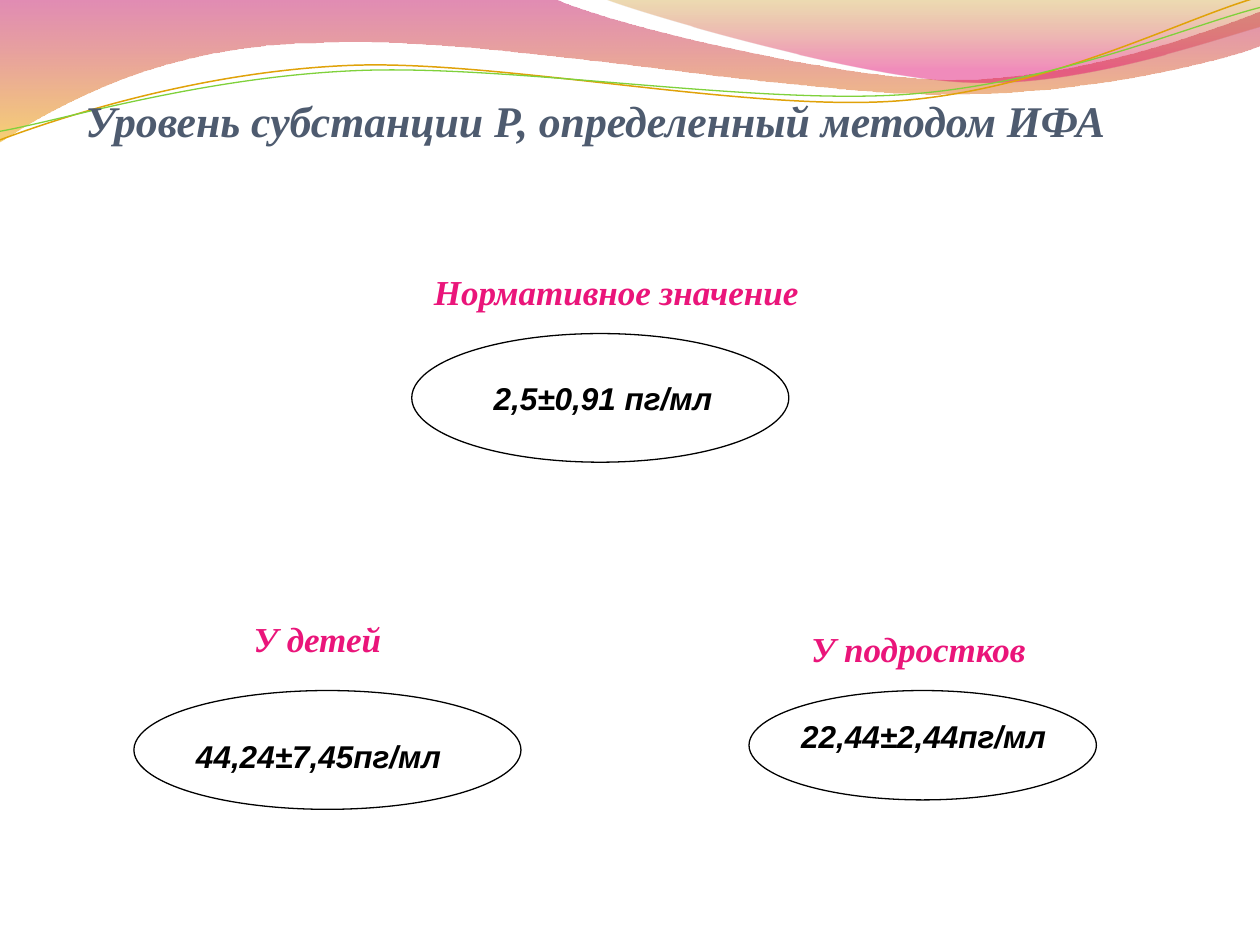
import pptx
import pptx.dml.color
import pptx.enum.shapes
import pptx.enum.text
import pptx.oxml
import pptx.oxml.ns
import pptx.util

Pt = pptx.util.Pt
qn = pptx.oxml.ns.qn
ALIGN = pptx.enum.text.PP_ALIGN
ANCHOR = pptx.enum.text.MSO_ANCHOR
SERIF, SANS = "Times New Roman", "Arial"
CURVE_TILT = 357.3

# Outlines in points: one pair is a straight segment, three pairs are a Bezier curve.
PINK_BAND = [
    [(0, -0.7)], [(316.8, -0.7)],
    [(342.7, 12.2), (478.1, 45.4), (545.8, 45.4)],
    [(614.2, 45.4), (689.8, 18.7), (720, 6.5)],
    [(720.7, 25.9)],
    [(707.8, 31.7), (626.4, 54.7), (537.1, 54)],
    [(447.8, 54), (275, 20.2), (185, 24.5)],
    [(92.9, 25.2), (33.1, 59.8), (-0.7, 81.4)],
]
CORNER_BAND = [
    [(344.9, -0.7)],
    [(366.5, 7.9), (491, 44.6), (553.7, 46.8)],
    [(616.3, 49.7), (691.9, 23), (720, 15.1)],
    [(720, 0)],
]
GOLD_CURVE = [
    [(-1.4, 63)],
    [(33.8, 51.7), (114.1, 29.4), (199.8, 29.9)],
    [(284.9, 30.3), (425.8, 67.3), (512.4, 64.9)],
    [(599, 62.4), (676.5, 25.7), (720.2, 15.5)],
]
GREEN_CURVE = [
    [(-1.1, 58)],
    [(32.9, 53.8), (116.1, 32.4), (204.1, 33)],
    [(290.6, 33.4), (428.9, 63.1), (515.5, 61.4)],
    [(601.3, 59.6), (678.4, 30.1), (721.4, 21.3)],
]

OVALS = [(235.3, 190.6, 215.5, 73.5), (76.5, 394.6, 221.2, 67.9), (428, 394.6, 198.5, 62.5)]
LABELS = [
    ("Нормативное значение", (240.9, 151.2, 300, 31), ALIGN.LEFT),
    ("У детей", (36.7, 349.2, 289.4, 31), ALIGN.CENTER),
    ("У подростков", (456.4, 355, 204.5, 31), ALIGN.LEFT),
]
VALUES = [
    ("2,5±0,91 пг/мл", (275, 213, 147.6, 29)),
    ("44,24±7,45пг/мл", (104.9, 417.5, 164.2, 29)),
    ("22,44±2,44пг/мл", (450.7, 406.2, 158.4, 29)),
]


def rgb(color):
    return pptx.dml.color.RGBColor.from_string(color)


def add_outline(slide, outline, close):
    """Freeform whose three-pair segments become cubic Bezier curves."""
    points = [(Pt(x), Pt(y)) for segment in outline for x, y in segment]
    builder = slide.shapes.build_freeform(*points[0])
    builder.add_line_segments(points[1:], close=close)
    s = builder.convert_to_shape()
    s.shadow.inherit = False
    s.fill.background()

    lines = iter(list(s.element.iter(qn("a:lnTo"))))
    for segment in outline[1:]:
        parts = [next(lines) for _ in segment]
        if len(parts) == 3:
            curve = pptx.oxml.parse_xml(f'<a:cubicBezTo {pptx.oxml.ns.nsdecls("a")}/>')
            parts[0].addprevious(curve)
            for part in parts:
                curve.append(part[0])
                part.getparent().remove(part)
    return s


def add_band(slide, outline, stops):
    """Closed shape with a downward gradient of (position %, colour, opacity %)."""
    s = add_outline(slide, outline, True)
    s.line.fill.background()
    gs = "".join(
        f'<a:gs pos="{pos * 1000}"><a:srgbClr val="{color}">'
        f'<a:alpha val="{opacity * 1000}"/></a:srgbClr></a:gs>'
        for pos, color, opacity in stops)
    grad = pptx.oxml.parse_xml(
        f'<a:gradFill {pptx.oxml.ns.nsdecls("a")}><a:gsLst>{gs}</a:gsLst>'
        '<a:lin ang="5400000" scaled="0"/></a:gradFill>')
    sp_pr = s.element.spPr
    sp_pr.replace(sp_pr.find(qn("a:noFill")), grad)


def set_line(s, color, width):
    s.line.color.rgb = rgb(color)
    s.line.width = Pt(width)


def add_curve(slide, outline, color, width):
    s = add_outline(slide, outline, False)
    s.rotation = CURVE_TILT
    set_line(s, color, width)


def add_oval(slide, box):
    s = slide.shapes.add_shape(pptx.enum.shapes.MSO_SHAPE.OVAL, *map(Pt, box))
    s.shadow.inherit = False
    s.fill.solid()
    s.fill.fore_color.rgb = rgb("FFFFFF")
    set_line(s, "000000", 0.75)


def add_text(slide, text, box, size, font, color, align=ALIGN.LEFT):
    tf = slide.shapes.add_textbox(*map(Pt, box)).text_frame
    tf.word_wrap = True
    p = tf.paragraphs[0]
    p.text = text
    p.alignment = align
    p.font.name = font
    p.font.size = Pt(size)
    p.font.bold = p.font.italic = True
    p.font.color.rgb = rgb(color)
    return tf


def add_title(slide, text):
    tf = add_text(slide, text, (42.5, 20.2, 595.4, 63.4), 25, SERIF, "4E5B6F", ALIGN.CENTER)
    tf.vertical_anchor = ANCHOR.BOTTOM
    tf.margin_left = tf.margin_right = tf.margin_bottom = 0


def main():
    prs = pptx.Presentation()
    prs.slide_width, prs.slide_height = Pt(720), Pt(540)
    slide = prs.slides.add_slide(prs.slide_layouts[6])

    add_band(slide, PINK_BAND, [(0, "BD0059", 45), (100, "F0AB00", 55)])
    add_band(slide, CORNER_BAND, [(0, "C38B00", 30), (80, "E1006B", 45)])
    add_curve(slide, GOLD_CURVE, "E0A209", 0.85)
    add_curve(slide, GREEN_CURVE, "7FD13B", 0.75)

    add_title(slide, "Уровень субстанции Р, определенный методом ИФА")
    for box in OVALS:
        add_oval(slide, box)
    for text, box, align in LABELS:
        add_text(slide, text, box, 20, SERIF, "EA157A", align)
    for text, box in VALUES:
        add_text(slide, text, box, 18, SANS, "000000")

    prs.save("out.pptx")


if __name__ == "__main__":
    main()
